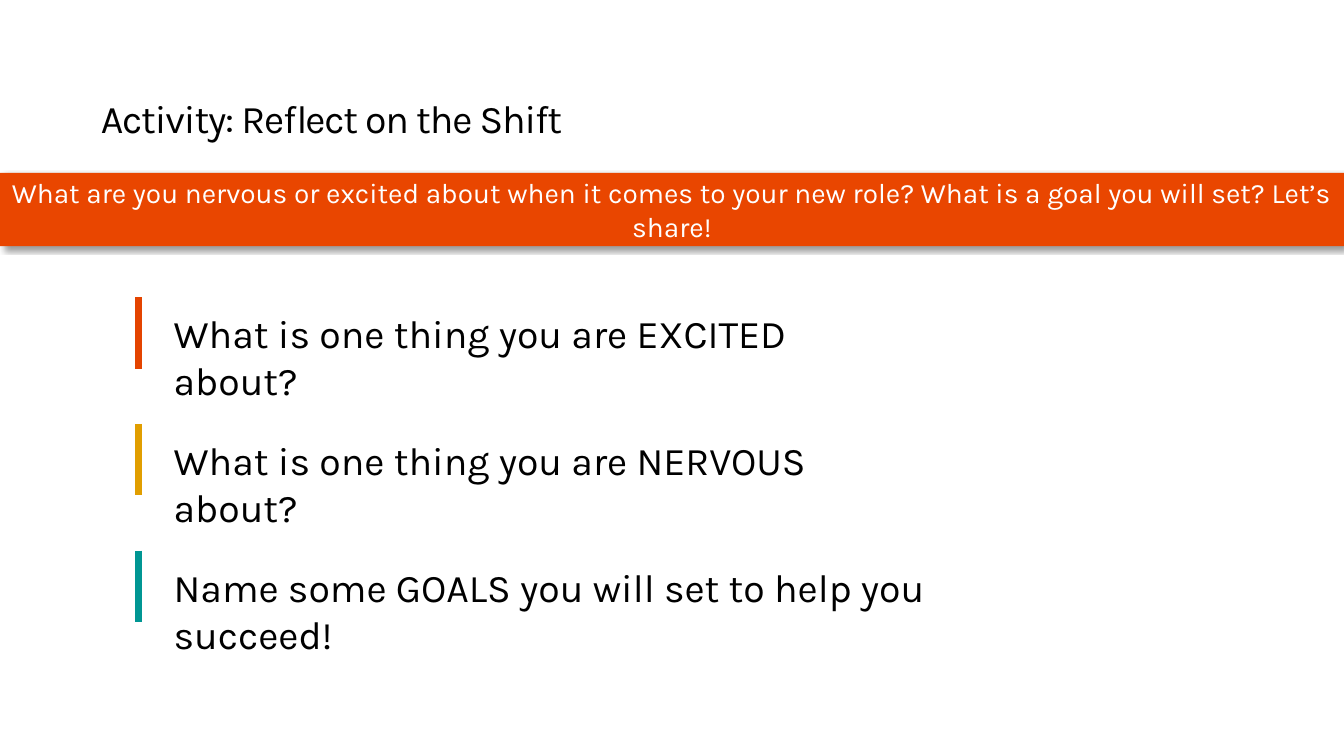
import dataclasses
import lxml.etree
import pptx
import pptx.dml.color
import pptx.enum.shapes
import pptx.enum.text
import pptx.oxml.ns
import pptx.util

RGB = pptx.dml.color.RGBColor
Anchor = pptx.enum.text.MSO_ANCHOR
Align = pptx.enum.text.PP_ALIGN
qn = pptx.oxml.ns.qn

BLACK = RGB(0x00, 0x00, 0x00)
WHITE = RGB(0xFF, 0xFF, 0xFF)
BANNER_ORANGE = RGB(0xE9, 0x46, 0x00)
ORANGE = RGB(0xE4, 0x44, 0x00)
GOLD = RGB(0xE1, 0x9E, 0x00)
TEAL = RGB(0x00, 0x96, 0x93)

FONT = "Karla"
COLS, ROWS = 160, 90
WIDTH, HEIGHT = pptx.util.Inches(13.333), pptx.util.Inches(7.5)


@dataclasses.dataclass(frozen=True)
class Prompt:
    text: str
    color: RGB
    cols: float


PROMPTS = [
    Prompt("What is one thing you are EXCITED about?", ORANGE, 85.9),
    Prompt("What is one thing you are NERVOUS about?", GOLD, 89),
    Prompt("Name some GOALS you will set to help you succeed!", TEAL, 110),
]
FIRST_ROW, ROW_STEP = 36.25, 15.08
BAR_COL, TEXT_COL = 16.5, 19.5
BAR_RISE, BAR_ROWS = 0.85, 8.5


def col(n: float) -> int:
    return round(WIDTH * n / COLS)


def row(n: float) -> int:
    return round(HEIGHT * n / ROWS)


def add_effects(sp) -> lxml.etree._Element:
    return lxml.etree.SubElement(sp._element.spPr, qn("a:effectLst"))


def put_text(sp, text: str, *, size: float = 28, color: RGB = BLACK,
             align=Align.LEFT, anchor=Anchor.TOP, margins=None,
             line_spacing=None, tracking=None) -> None:
    tf = sp.text_frame
    tf.word_wrap = True
    tf.vertical_anchor = anchor
    if margins:
        tf.margin_left, tf.margin_top, tf.margin_right, tf.margin_bottom = margins
    p = tf.paragraphs[0]
    p.alignment = align
    if line_spacing:
        p.line_spacing = line_spacing
    r = p.add_run()
    r.text = text
    r.font.name = FONT
    r.font.size = pptx.util.Pt(size)
    r.font.color.rgb = color
    if tracking:
        r.font._element.set("spc", str(round(tracking * 100)))


def add_title(s) -> None:
    sp = s.shapes.add_textbox(col(12), row(9.12), col(136), row(7.8))
    put_text(sp, "Activity: Reflect on the Shift", anchor=Anchor.BOTTOM,
             margins=(0, pptx.util.Inches(0.05), 0, 0),
             line_spacing=0.9, tracking=-0.8)


def add_banner(s) -> None:
    sp = s.shapes.add_shape(pptx.enum.shapes.MSO_SHAPE.RECTANGLE,
                            0, row(20.6), WIDTH, row(8.7))
    sp.fill.solid()
    sp.fill.fore_color.rgb = BANNER_ORANGE
    sp.line.fill.background()
    shadow = lxml.etree.SubElement(
        add_effects(sp), qn("a:outerShdw"), blurRad=str(pptx.util.Pt(4)),
        dist=str(pptx.util.Pt(3)), dir=str(45 * 60000), rotWithShape="0")
    tint = lxml.etree.SubElement(shadow, qn("a:srgbClr"), val=str(BLACK))
    lxml.etree.SubElement(tint, qn("a:alpha"), val="40000")
    put_text(sp, "What are you nervous or excited about when it comes to your "
             "new role? What is a goal you will set? Let’s share!",
             size=20, color=WHITE, align=Align.CENTER, anchor=Anchor.MIDDLE)


def add_prompt(s, prompt: Prompt, top: float) -> None:
    group = s.shapes.add_group_shape()
    sp = group.shapes.add_textbox(col(TEXT_COL), row(top),
                                  col(prompt.cols), row(6.8))
    put_text(sp, prompt.text)
    bar = group.shapes.add_connector(
        pptx.enum.shapes.MSO_CONNECTOR.STRAIGHT, col(BAR_COL),
        row(top - BAR_RISE), col(BAR_COL), row(top - BAR_RISE + BAR_ROWS))
    bar.line.color.rgb = prompt.color
    bar.line.width = pptx.util.Pt(5)
    add_effects(bar)


def main() -> None:
    prs = pptx.Presentation()
    prs.slide_width, prs.slide_height = WIDTH, HEIGHT
    s = prs.slides.add_slide(prs.slide_layouts[6])
    add_title(s)
    add_banner(s)
    for i, prompt in enumerate(PROMPTS):
        add_prompt(s, prompt, FIRST_ROW + i * ROW_STEP)
    prs.save("out.pptx")


if __name__ == "__main__":
    main()
